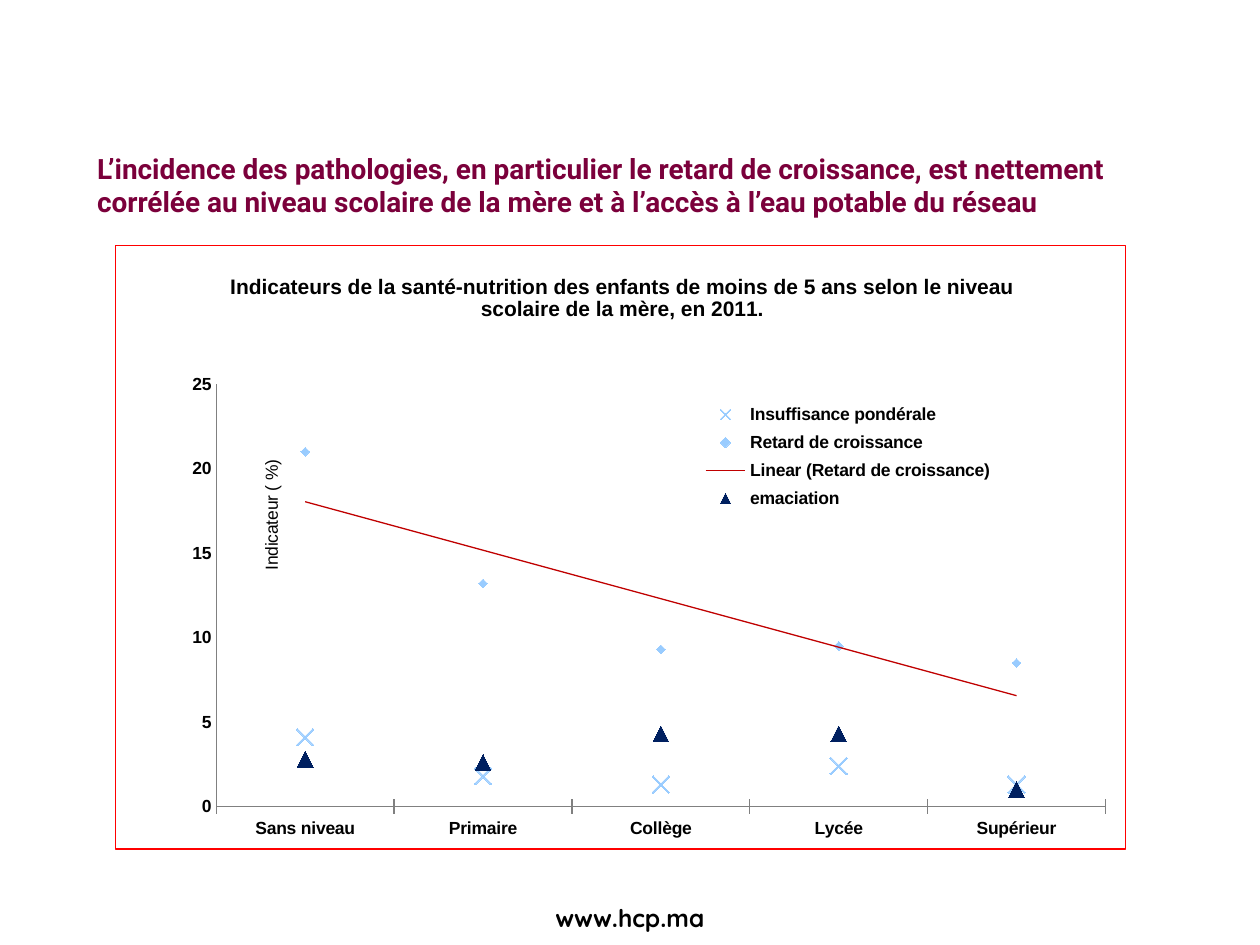
from lxml import etree
from pptx import Presentation
from pptx.chart.data import CategoryChartData
from pptx.dml.color import RGBColor
from pptx.enum.chart import XL_CHART_TYPE, XL_LEGEND_POSITION, XL_MARKER_STYLE, XL_TICK_MARK
from pptx.enum.text import MSO_ANCHOR, MSO_AUTO_SIZE, PP_ALIGN
from pptx.oxml import parse_xml
from pptx.oxml.ns import nsdecls, qn
from pptx.util import Inches, Pt

LINE_MARKERS = XL_CHART_TYPE.LINE_MARKERS
LEGEND_TOP = XL_LEGEND_POSITION.TOP
CROSS, NO_TICK = XL_TICK_MARK.CROSS, XL_TICK_MARK.NONE
X, DIAMOND, TRIANGLE = XL_MARKER_STYLE.X, XL_MARKER_STYLE.DIAMOND, XL_MARKER_STYLE.TRIANGLE
LEFT, CENTER = PP_ALIGN.LEFT, PP_ALIGN.CENTER
MIDDLE, NO_FIT = MSO_ANCHOR.MIDDLE, MSO_AUTO_SIZE.NONE

WIDTH, HEIGHT = Inches(10), Inches(7.5)
COLORS = {"text": "000000", "title": "7B003B", "sky": "99CCFF", "navy": "002060",
          "trend": "C00000", "border": "FF0000", "axis": "808080"}
CATEGORIES = ["Sans niveau", "Primaire", "Collège", "Lycée", "Supérieur"]
SERIES = [
    ("Insuffisance pondérale", (4.1, 1.8, 1.3, 2.4, 1.3), X, 10, "sky"),
    ("Retard de croissance", (21, 13.2, 9.3, 9.5, 8.5), DIAMOND, 5, "sky"),
    ("emaciation", (2.8, 2.6, 4.3, 4.3, 1), TRIANGLE, 9, "navy"),
]


def rgb(name):
    """Return the named colour."""
    return RGBColor.from_string(COLORS[name])


def box(left, top, width, height):
    """Turn shares of the slide into lengths."""
    return [round(share * side) for share, side in
            zip((left, top, width, height), (WIDTH, HEIGHT) * 2)]


def set_font(font, name, size, color="text", bold=True):
    """Apply font values."""
    for key, value in {"name": name, "size": Pt(size), "bold": bold}.items():
        setattr(font, key, value)
    font.color.rgb = rgb(color)


def write(tf, text, align, *font):
    """Write one formatted paragraph in a text frame."""
    p = tf.paragraphs[0]
    p.alignment = align
    r = p.add_run()
    r.text = text
    set_font(r.font, *font)


def place(parent, index, **shares):
    """Give a chart part a manual layout in shares of the chart."""
    for old in parent.findall(qn("c:layout")):
        parent.remove(old)
    layout = etree.Element(qn("c:layout"))
    manual = etree.SubElement(layout, qn("c:manualLayout"))
    if parent.tag == qn("c:plotArea"):
        etree.SubElement(manual, qn("c:layoutTarget")).set("val", "inner")
    for key in ("x", "y"):
        etree.SubElement(manual, qn(f"c:{key}Mode")).set("val", "edge")
    for key, value in shares.items():
        etree.SubElement(manual, qn(f"c:{key}")).set("val", str(value))
    parent.insert(index, layout)


def line_xml(color):
    """Return shape properties holding a thin line."""
    return (f'<c:spPr {nsdecls("c", "a")}><a:ln w="{Pt(0.75)}"><a:solidFill>'
            f'<a:srgbClr val="{COLORS[color]}"/></a:solidFill></a:ln></c:spPr>')


def add_trend(series):
    """Add a linear trend line to a series."""
    trend = parse_xml(
        f'<c:trendline {nsdecls("c")}><c:name>Linear ({series.name})</c:name>'
        f'{line_xml("trend")}<c:trendlineType val="linear"/>'
        '<c:dispRSqr val="0"/><c:dispEq val="0"/></c:trendline>')
    series._element.find(qn("c:cat")).addprevious(trend)


def format_series(series, style, size, color):
    """Show a series as markers without a line."""
    series.smooth = False
    series.format.line.fill.background()
    marker = series.marker
    marker.style, marker.size = style, size
    marker.format.line.color.rgb = rgb(color)
    if style == X:
        marker.format.fill.background()
    else:
        marker.format.fill.solid()
        marker.format.fill.fore_color.rgb = rgb(color)


def format_axes(chart):
    """Format both axes and name the value axis."""
    for axis, tick in ((chart.category_axis, CROSS), (chart.value_axis, NO_TICK)):
        axis.major_tick_mark, axis.minor_tick_mark = tick, NO_TICK
        axis.has_major_gridlines = False
        axis.format.line.color.rgb = rgb("axis")
        set_font(axis.tick_labels.font, "Arial", 10)
    values = chart.value_axis
    values.minimum_scale, values.maximum_scale, values.major_unit = 0, 25, 5
    write(values.axis_title.text_frame, "Indicateur ( %)", CENTER, "Arial", 10, "text", False)


def add_health_chart(s):
    """Add the chart of health indicators by schooling."""
    data = CategoryChartData()
    data.categories = CATEGORIES
    for name, values, *_ in SERIES:
        data.add_series(name, values)
    chart = s.shapes.add_chart(LINE_MARKERS, *box(0.091, 0.259, 0.803, 0.64), data).chart
    set_font(chart.font, "Quicksand", 10, "text", False)
    write(chart.chart_title.text_frame,
          "Indicateurs de la santé-nutrition des enfants de moins de 5 ans "
          "selon le niveau scolaire de la mère, en 2011.", CENTER, "Arial", 12)
    chart.plots[0].vary_by_categories = False
    for series, (_, _, *marker) in zip(chart.plots[0].series, SERIES):
        format_series(series, *marker)
    add_trend(chart.plots[0].series[1])
    format_axes(chart)
    chart.has_legend = True
    legend = chart.legend
    legend.position, legend.include_in_layout = LEGEND_TOP, False
    set_font(legend.font, "Arial", 10)
    space = chart._chartSpace
    place(space.xpath("c:chart/c:title")[0], 1, x=0.11, y=0.04)
    place(space.xpath("c:chart/c:plotArea")[0], 0, x=0.1, y=0.23, w=0.88, h=0.7)
    place(space.xpath(".//c:valAx/c:title")[0], 1, x=0.14, y=0.35)
    place(space.xpath("c:chart/c:legend")[0], 1, x=0.58, y=0.25, w=0.29, h=0.2)
    space.find(qn("c:txPr")).addprevious(parse_xml(line_xml("border")))


def add_title(s):
    """Place and write the slide title."""
    sp = s.shapes.title
    sp.left, sp.top, sp.width, sp.height = box(0.067, 0.112, 0.882, 0.167)
    tf = sp.text_frame
    tf.word_wrap, tf.auto_size, tf.vertical_anchor = True, NO_FIT, MIDDLE
    write(tf, "L’incidence des pathologies, en particulier le retard de croissance, "
              "est nettement corrélée au niveau scolaire de la mère et à l’accès à "
              "l’eau potable du réseau", LEFT, "Roboto", 16, "title")


def add_footer(s):
    """Add the web address at the foot of the slide."""
    tf = s.shapes.add_textbox(*box(0.382, 0.949, 0.236, 0.044)).text_frame
    tf.word_wrap = True
    write(tf, "www.hcp.ma", CENTER, "Quicksand", 14)


def main():
    """Build and save the slide."""
    prs = Presentation()
    prs.slide_width, prs.slide_height = WIDTH, HEIGHT
    s = prs.slides.add_slide(prs.slide_layouts[5])
    add_footer(s)
    add_title(s)
    add_health_chart(s)
    prs.save("out.pptx")


if __name__ == "__main__":
    main()
